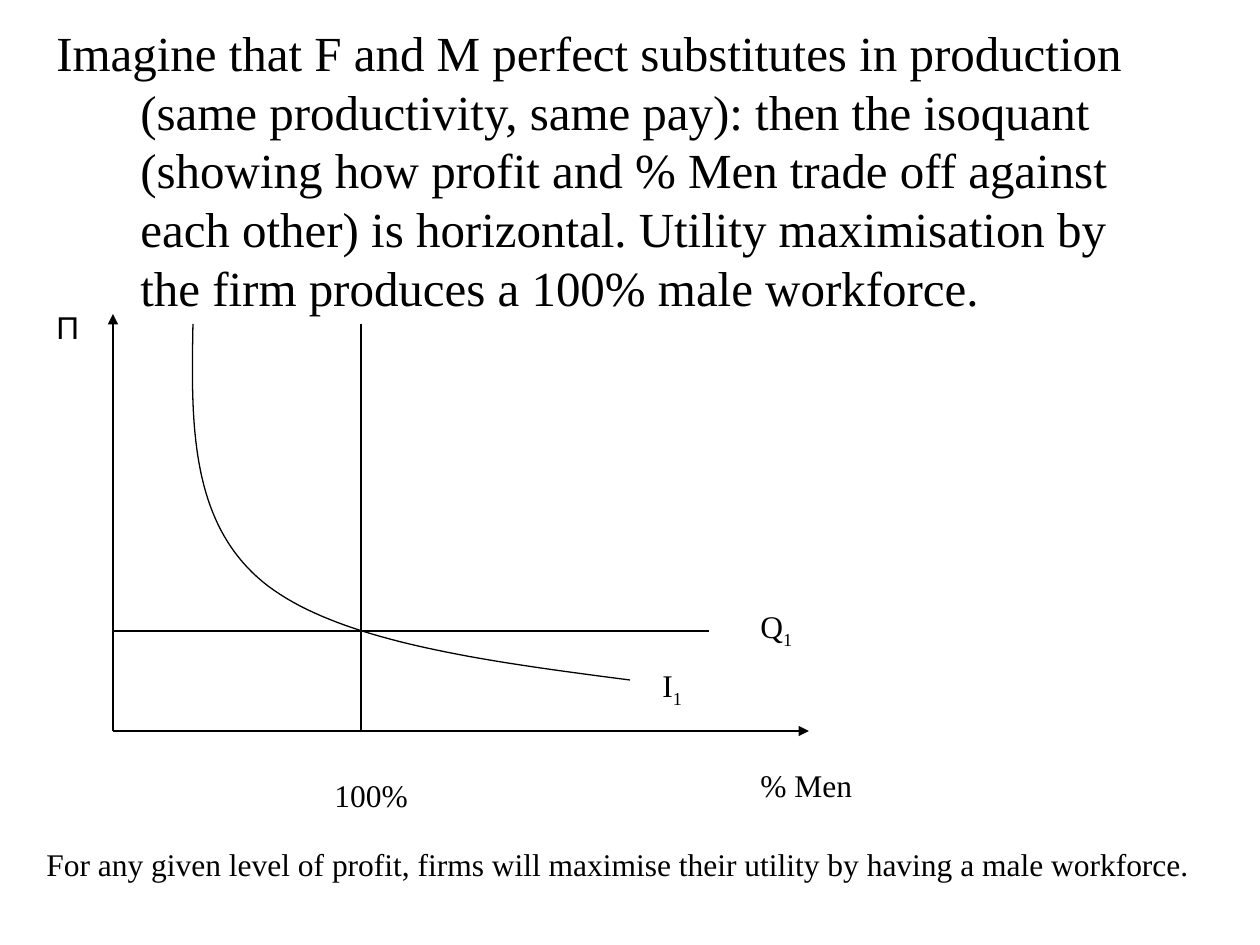
import pptx
import pptx.util
import pptx.dml.color
import pptx.enum.shapes
import pptx.enum.text
import pptx.oxml.ns
from lxml import etree

SERIF = "Times New Roman"
INK = "000000"
SCALE = 914400 / 126


def px(size):
    return round(size * SCALE)


def tint(code):
    return pptx.dml.color.RGBColor.from_string(code)


def write(slide, box, runs, size=18, font=SERIF, wrap=True, hang=0):
    frame = slide.shapes.add_textbox(*map(px, box)).text_frame
    frame.word_wrap = wrap
    if size == 18:
        frame.auto_size = pptx.enum.text.MSO_AUTO_SIZE.SHAPE_TO_FIT_TEXT
    para = frame.paragraphs[0]
    if hang:
        props = para._p.get_or_add_pPr()
        props.set("marL", str(px(hang)))
        props.set("indent", str(-px(hang)))
    for text, base in runs:
        run = para.add_run()
        run.text = text
        run.font.size = pptx.util.Pt(size)
        run.font.name = font
        run.font.color.rgb = tint(INK)
        if base:
            run.font._element.set("baseline", str(base * 1000))


def ink(line):
    line.color.rgb = tint(INK)
    line.width = pptx.util.Pt(0.75)


def rule(slide, start, end, arrow=False):
    kind = pptx.enum.shapes.MSO_CONNECTOR.STRAIGHT
    line = slide.shapes.add_connector(kind, *map(px, start + end))
    ink(line.line)
    name = pptx.oxml.ns.qn
    if arrow:
        etree.SubElement(line.line._get_or_add_ln(), name("a:tailEnd"), type="triangle")
    etree.SubElement(line._element.spPr, name("a:effectLst"))


def bend(points, steps=40):
    spots = []
    for first in range(0, len(points) - 1, 3):
        knots = points[first:first + 4]
        for step in range(steps + 1):
            t = step / steps
            parts = ((1 - t) ** 3, 3 * t * (1 - t) ** 2, 3 * t * t * (1 - t), t ** 3)
            spots.append(tuple(
                px(sum(w * knot[axis] for w, knot in zip(parts, knots)))
                for axis in (0, 1)))
    return spots


def curve(slide, points):
    spots = bend(points)
    pen = slide.shapes.build_freeform(*spots[0])
    pen.add_line_segments(spots[1:], close=False)
    shape = pen.convert_to_shape()
    shape.shadow.inherit = False
    shape.fill.background()
    ink(shape.line)


def graph(slide, left, top, wide, high):
    def at(x, y):
        return left + x, top + y

    def label(x, y, width, runs, **style):
        write(slide, (*at(x, y), width, 50), runs, **style)

    base = at(0, high)
    rule(slide, base, at(0, 0), arrow=True)
    rule(slide, base, at(wide, high), arrow=True)
    rule(slide, at(0, 317), at(596, 317))
    rule(slide, at(248, 10), at(248, high))
    knots = [(80, 10), (78, 109), (77, 208), (150, 268),
             (222, 327), (369, 347), (517, 366)]
    curve(slide, [at(*knot) for knot in knots])
    label(-69, -12, 49, [("Π", 0)], font="Arial", wrap=False)
    label(537, 346, 100, [("I", 0), ("1", -25)])
    label(635, 287, 60, [("Q", 0), ("1", -25)], wrap=False)
    label(635, 446, 228, [("% Men", 0)])
    label(209, 456, 139, [("100%", 0)])


def main():
    deck = pptx.Presentation()
    deck.slide_width, deck.slide_height = px(1260), px(945)
    slide = deck.slides.add_slide(deck.slide_layouts[6])
    intro = (
        "Imagine that F and M perfect substitutes in production "
        "(same productivity, same pay): then the isoquant (showing how profit "
        "and % Men trade off against each other) is horizontal. Utility "
        "maximisation by the firm produces a 100% male workforce."
    )
    write(slide, (44, 16, 1142, 843), [(intro, 0)], size=28, hang=84)
    graph(slide, 113, 314, 696, 417)
    close = ("For any given level of profit, firms will maximise their utility "
             "by having a male workforce.")
    write(slide, (34, 839, 1171, 50), [(close, 0)])
    deck.save("out.pptx")


if __name__ == "__main__":
    main()
